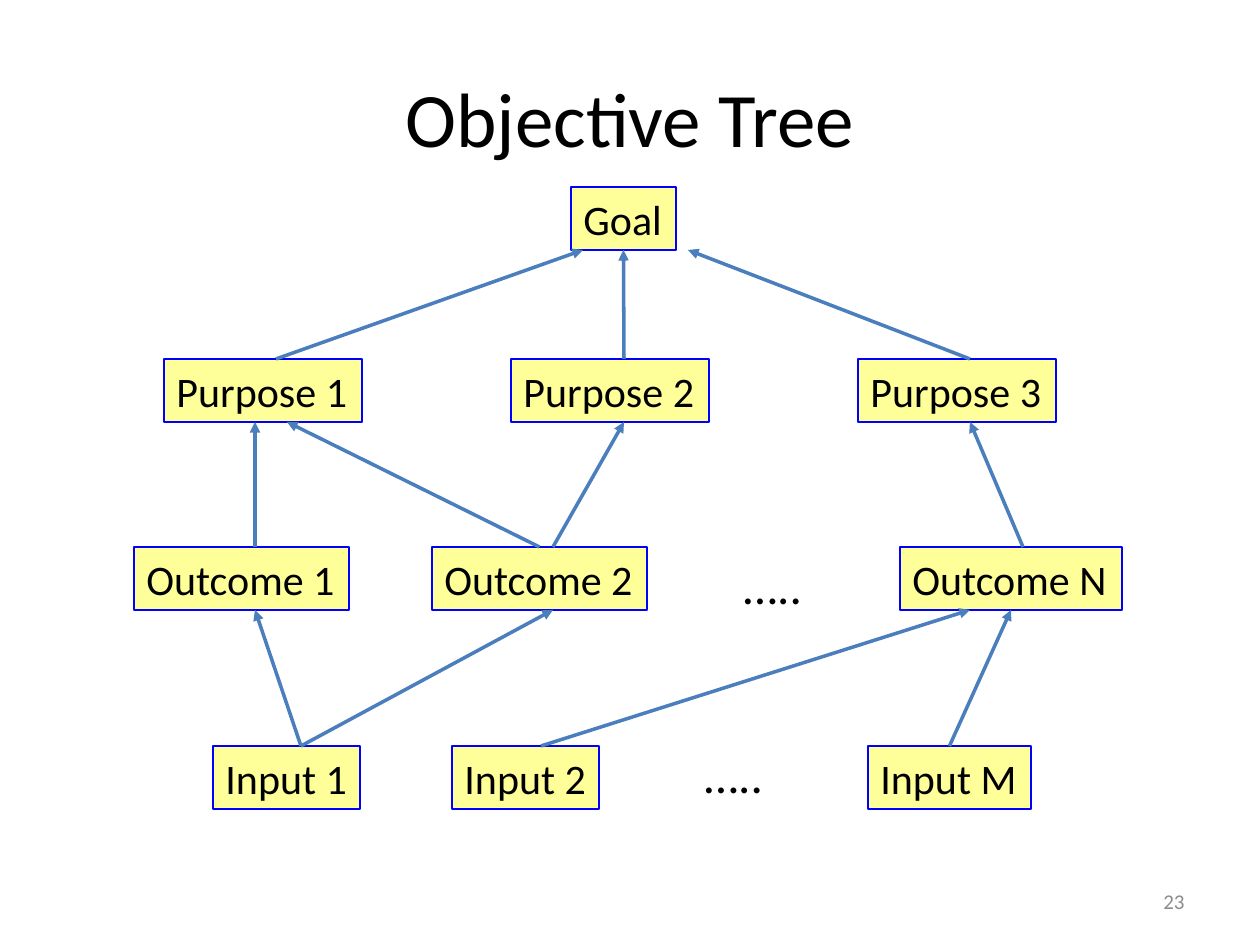
import pptx
import pptx.dml.color
import pptx.enum.shapes
import pptx.enum.text
import pptx.oxml.ns
import pptx.util
from lxml import etree

PX = 914400 / 126
BOX_HEIGHT = 63
TOP, BOTTOM = 0, 2
ALIGN = pptx.enum.text.PP_ALIGN
ANCHOR = pptx.enum.text.MSO_ANCHOR

ROWS = [
    (187, [("Goal", 571, 105)]),
    (359, [(f"Purpose {i + 1}", 164 + 347 * i, 198) for i in range(3)]),
    (547, [("Outcome 1", 134, 215), ("Outcome 2", 432, 215), ("Outcome N", 900, 222)]),
    (746, [("Input 1", 213, 147), ("Input 2", 452, 147), ("Input M", 868, 163)]),
]
LINKS = [
    ("Purpose 1", 276, "Goal", 583),
    ("Purpose 2", 624, "Goal", 624),
    ("Purpose 3", 970, "Goal", 688),
    ("Outcome 1", 255, "Purpose 1", 255),
    ("Outcome 2", 553, "Purpose 2", 624),
    ("Outcome N", 1023, "Purpose 3", 970),
    ("Input 1", 301, "Outcome 1", 255),
    ("Input 1", 301, "Outcome 2", 553),
    ("Input 2", 541, "Outcome N", 970),
    ("Input M", 950, "Outcome N", 1011),
    ("Outcome 2", 540, "Purpose 1", 287),
]


def emu(px):
    return pptx.util.Emu(round(px * PX))


def rgb(value):
    return pptx.dml.color.RGBColor.from_string(value)


def write_text(shape, text, size, color="000000", align=ALIGN.LEFT,
               anchor=ANCHOR.TOP, wrap=False):
    frame = shape.text_frame
    frame.word_wrap = wrap
    frame.vertical_anchor = anchor
    if not wrap:
        frame.auto_size = pptx.enum.text.MSO_AUTO_SIZE.SHAPE_TO_FIT_TEXT
    paragraph = frame.paragraphs[0]
    paragraph.alignment = align
    run = paragraph.add_run()
    run.text = text
    run.font.name = "Calibri"
    run.font.size = pptx.util.Pt(size)
    run.font.color.rgb = rgb(color)


def add_label(slide, left, top, width, height, text, size, **style):
    shape = slide.shapes.add_textbox(emu(left), emu(top), emu(width), emu(height))
    write_text(shape, text, size, **style)


def add_box(slide, left, top, width, text):
    shape = slide.shapes.add_shape(
        pptx.enum.shapes.MSO_SHAPE.RECTANGLE,
        emu(left), emu(top), emu(width), emu(BOX_HEIGHT))
    shape.shadow.inherit = False
    shape.fill.solid()
    shape.fill.fore_color.rgb = rgb("FFFF99")
    shape.line.color.rgb = rgb("0000FF")
    shape.line.width = pptx.util.Pt(0.75)
    write_text(shape, text, 24)
    return shape


def is_middle(shape, x):
    return abs(shape.left + shape.width / 2 - emu(x)) < emu(2)


def add_arrow(slide, child, child_x, parent, parent_x):
    connector = slide.shapes.add_connector(
        pptx.enum.shapes.MSO_CONNECTOR.STRAIGHT,
        emu(child_x), child.top, emu(parent_x), parent.top + parent.height)
    if is_middle(child, child_x):
        connector.begin_connect(child, TOP)
    if is_middle(parent, parent_x):
        connector.end_connect(parent, BOTTOM)
    connector.line.color.rgb = rgb("4B7EBC")
    connector.line.width = pptx.util.Pt(2)
    properties = connector.element.spPr
    line = properties.find(pptx.oxml.ns.qn("a:ln"))
    etree.SubElement(line, pptx.oxml.ns.qn("a:tailEnd"), type="triangle")
    etree.SubElement(properties, pptx.oxml.ns.qn("a:effectLst"))


def main():
    presentation = pptx.Presentation()
    presentation.slide_width = emu(1260)
    presentation.slide_height = emu(945)
    slide = presentation.slides.add_slide(presentation.slide_layouts[6])

    add_label(slide, 63, 38, 1134, 157, "Objective Tree", 44,
              align=ALIGN.CENTER, anchor=ANCHOR.MIDDLE, wrap=True)
    boxes = {}
    for top, row in ROWS:
        for text, left, width in row:
            boxes[text] = add_box(slide, left, top, width, text)
    for left, top in [(731, 549), (692, 738)]:
        add_label(slide, left, top, 84, 72, "…..", 28)
    for child, child_x, parent, parent_x in LINKS:
        add_arrow(slide, boxes[child], child_x, boxes[parent], parent_x)
    add_label(slide, 903, 876, 294, 50, "23", 12, color="8C8C8C",
              align=ALIGN.RIGHT, anchor=ANCHOR.MIDDLE, wrap=True)

    presentation.save("out.pptx")


if __name__ == "__main__":
    main()
